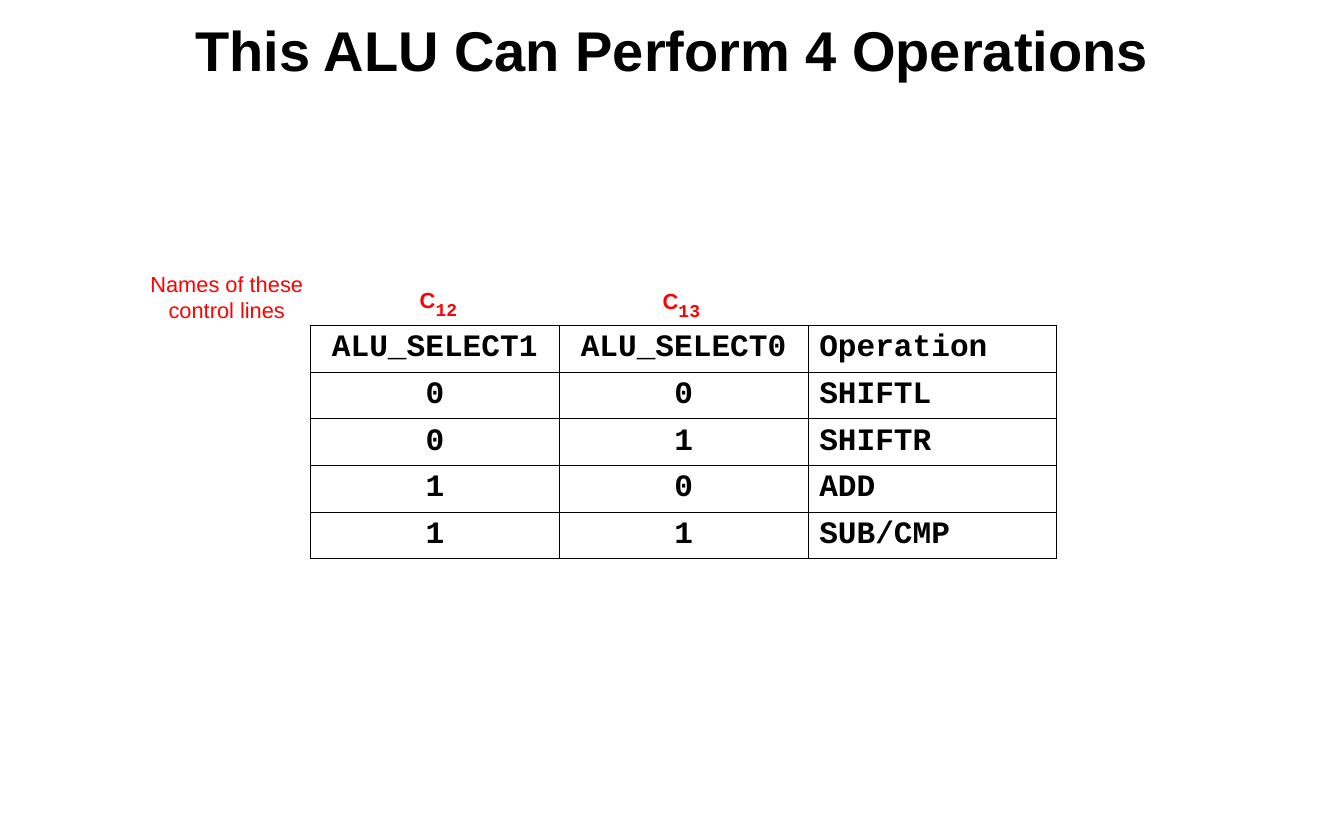
from lxml.etree import SubElement
from pptx import Presentation
from pptx.dml.color import RGBColor
from pptx.enum.text import MSO_ANCHOR, MSO_AUTO_SIZE, PP_ALIGN
from pptx.oxml.ns import qn
from pptx.util import Cm, Pt

BLACK, RED = "000000", "FF0000"
SANS, MONO = "Arial", "Courier New"
ROWS = [
    ("ALU_SELECT1", "ALU_SELECT0", "Operation"),
    ("0", "0", "SHIFTL"),
    ("0", "1", "SHIFTR"),
    ("1", "0", "ADD"),
    ("1", "1", "SUB/CMP"),
]


def color(code):
    return RGBColor.from_string(code)


def write(para, text, size=20, font=SANS, ink=BLACK, bold=False, center=False, base=0):
    para.alignment = PP_ALIGN.CENTER if center else PP_ALIGN.LEFT
    run = para.add_run()
    run.text = text
    run.font.size = Pt(size)
    run.font.name = font
    run.font.bold = bold
    run.font.color.rgb = color(ink)
    if base:
        run.font._element.set("baseline", str(base * 1000))


def border(cell):
    props = cell._tc.get_or_add_tcPr()
    for index, side in enumerate(("lnL", "lnR", "lnT", "lnB")):
        line = props.makeelement(qn(f"a:{side}"), {"w": str(Pt(0.75))})
        fill = SubElement(line, qn("a:solidFill"))
        SubElement(fill, qn("a:srgbClr"), val=BLACK)
        props.insert(index, line)


def add_title(slide, left, top, width, height):
    title = slide.shapes.title
    title.left, title.top = Cm(left), Cm(top)
    title.width, title.height = Cm(width), Cm(height)
    frame = title.text_frame
    frame.auto_size = MSO_AUTO_SIZE.NONE
    frame.vertical_anchor = MSO_ANCHOR.TOP
    frame.margin_top, frame.margin_bottom = Cm(0.36), Cm(0)
    write(frame.paragraphs[0], "This ALU Can Perform 4 Operations",
          size=36, bold=True, center=True)


def add_grid(slide, left, top, width, height):
    frame = slide.shapes.add_table(len(ROWS), len(ROWS[0]), Cm(left), Cm(top),
                                   Cm(width), Cm(height))
    table = frame.table
    table.first_row = table.horz_banding = False
    for r, row in enumerate(ROWS):
        for c, text in enumerate(row):
            cell = table.cell(r, c)
            cell.fill.background()
            border(cell)
            write(cell.text_frame.paragraphs[0], text, font=MONO, bold=True, center=c < 2)


def add_box(slide, left, top, width, height):
    box = slide.shapes.add_textbox(Cm(left), Cm(top), Cm(width), Cm(height))
    frame = box.text_frame
    frame.word_wrap = False
    frame.auto_size = MSO_AUTO_SIZE.SHAPE_TO_FIT_TEXT
    return frame


def add_line(slide, number, left, top, width, height):
    para = add_box(slide, left, top, width, height).paragraphs[0]
    write(para, "C", size=14, ink=RED, bold=True)
    write(para, number, font=MONO, ink=RED, bold=True, base=-25)


def add_note(slide, left, top, width, height):
    frame = add_box(slide, left, top, width, height)
    write(frame.paragraphs[0], "Names of these", size=14, ink=RED, center=True)
    write(frame.add_paragraph(), "control lines", size=14, ink=RED, center=True)


def main():
    deck = Presentation()
    deck.slide_width, deck.slide_height = Cm(30.48), Cm(19.05)
    slide = deck.slides.add_slide(deck.slide_layouts[5])
    add_title(slide, 2.54, 0, 25.4, 1.9)
    add_grid(slide, 7.04, 7.38, 16.93, 5.29)
    add_line(slide, "12", 9.27, 6.17, 1.45, 0.86)
    add_line(slide, "13", 14.78, 6.2, 1.45, 0.86)
    add_note(slide, 3.15, 6.02, 3.99, 1.45)
    deck.save("out.pptx")


if __name__ == "__main__":
    main()
